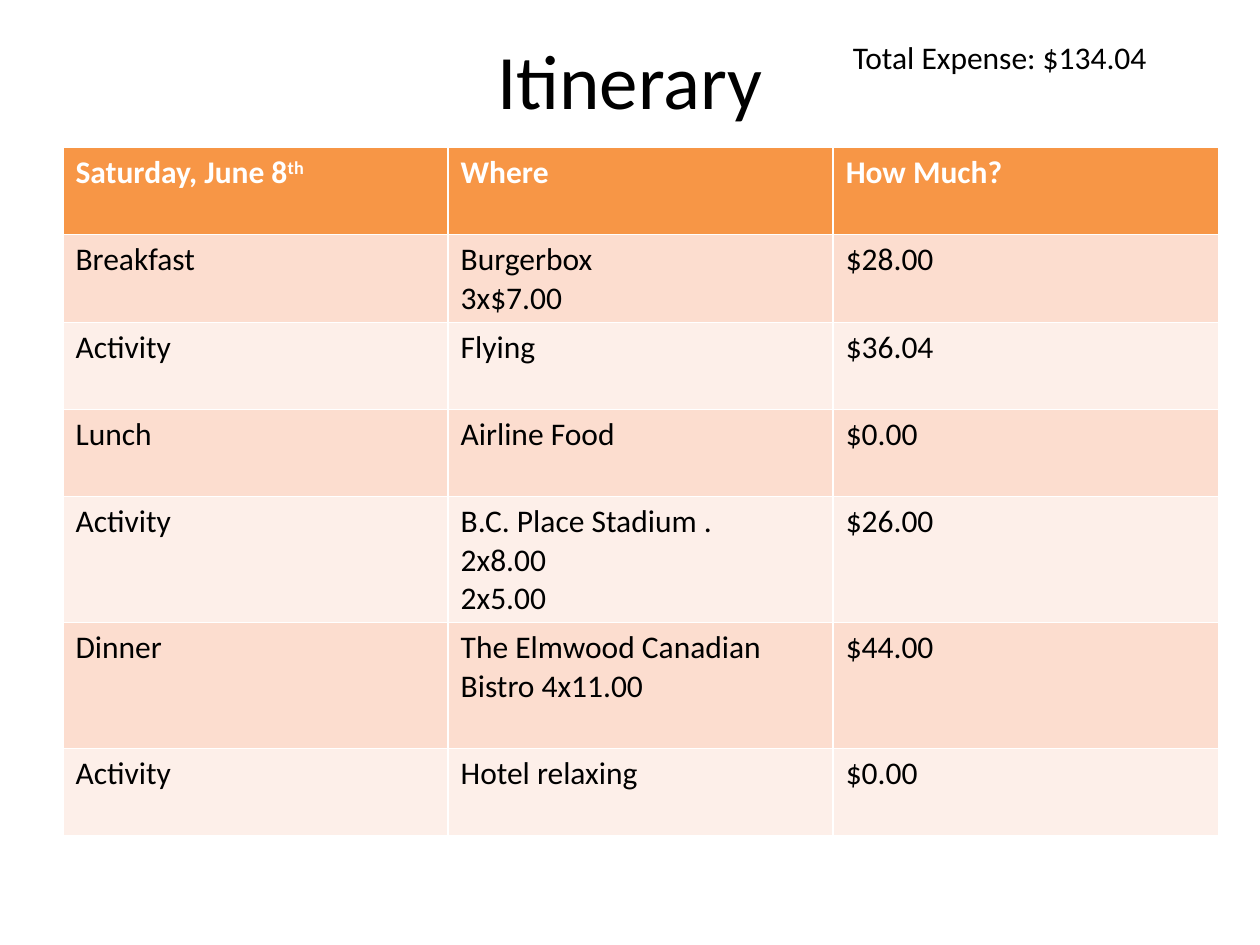
"""Build the itinerary slide with its daily expense table."""
from dataclasses import dataclass

from pptx import Presentation
from pptx import util as u
from pptx.dml import color
from pptx.enum import text

TITLE = "Itinerary"
TOTAL = "Total Expense: $134.04"
HEADER = ("Saturday, June 8", "Where", "How Much?")
ORDINAL = "th"
ITINERARY = [
    ("Breakfast", "Burgerbox\n3x$7.00", "$28.00"),
    ("Activity", "Flying", "$36.04"),
    ("Lunch", "Airline Food", "$0.00"),
    ("Activity", "B.C. Place Stadium .\n2x8.00\n2x5.00", "$26.00"),
    ("Dinner", "The Elmwood Canadian Bistro 4x11.00", "$44.00"),
    ("Activity", "Hotel relaxing", "$0.00"),
]
ROW_HEIGHT, TALL_HEIGHT = 0.69, 1.0
TALL_ROWS = (4, 5)


@dataclass(frozen=True)
class Theme:
    """Colours, font and type sizes of the slide."""
    font: str = "Calibri"
    ink: str = "000000"
    header_ink: str = "FFFFFF"
    header_fill: str = "F79646"
    bands: tuple = ("FCDDCF", "FDEFE9")
    title_size: int = 44
    body_size: int = 18


THEME = Theme()


def place(shape, left, top, width, height):
    shape.left, shape.top = u.Inches(left), u.Inches(top)
    shape.width, shape.height = u.Inches(width), u.Inches(height)


def format_runs(frame, size, ink, bold=False):
    for paragraph in frame.paragraphs:
        for run in paragraph.runs:
            run.font.name = THEME.font
            run.font.size = u.Pt(size)
            run.font.bold = bold
            run.font.color.rgb = color.RGBColor.from_string(ink)


def add_title(slide):
    title = slide.shapes.title
    place(title, 0.5, 0, 9, 1.25)
    frame = title.text_frame
    frame.text = TITLE
    frame.vertical_anchor = text.MSO_ANCHOR.MIDDLE
    frame.paragraphs[0].alignment = text.PP_ALIGN.CENTER
    format_runs(frame, THEME.title_size, THEME.ink)


def add_total(slide):
    box = slide.shapes.add_textbox(*map(u.Inches, (6.67, 0.25, 3.08, 0.4)))
    frame = box.text_frame
    frame.word_wrap = True
    frame.auto_size = text.MSO_AUTO_SIZE.SHAPE_TO_FIT_TEXT
    frame.text = TOTAL
    format_runs(frame, THEME.body_size, THEME.ink)


def add_itinerary(slide):
    rows = [HEADER, *ITINERARY]
    heights = [TALL_HEIGHT if i in TALL_ROWS else ROW_HEIGHT for i in range(len(rows))]
    area = map(u.Inches, (0.5, 1.17, 9.17, sum(heights)))
    table = slide.shapes.add_table(len(rows), len(HEADER), *area).table
    for row_index, values in enumerate(rows):
        table.rows[row_index].height = u.Inches(heights[row_index])
        is_header = row_index == 0
        fill = THEME.header_fill if is_header else THEME.bands[(row_index - 1) % 2]
        ink = THEME.header_ink if is_header else THEME.ink
        for column_index, value in enumerate(values):
            cell = table.cell(row_index, column_index)
            cell.fill.solid()
            cell.fill.fore_color.rgb = color.RGBColor.from_string(fill)
            cell.text_frame.text = value
            if is_header and column_index == 0:
                suffix = cell.text_frame.paragraphs[0].add_run()
                suffix.text = ORDINAL
                suffix.font._element.set("baseline", "30000")
            format_runs(cell.text_frame, THEME.body_size, ink, is_header)


def main():
    presentation = Presentation()
    presentation.slide_width, presentation.slide_height = u.Inches(10), u.Inches(7.5)
    slide = presentation.slides.add_slide(presentation.slide_layouts[5])
    add_title(slide)
    add_total(slide)
    add_itinerary(slide)
    presentation.save("out.pptx")


if __name__ == "__main__":
    main()
